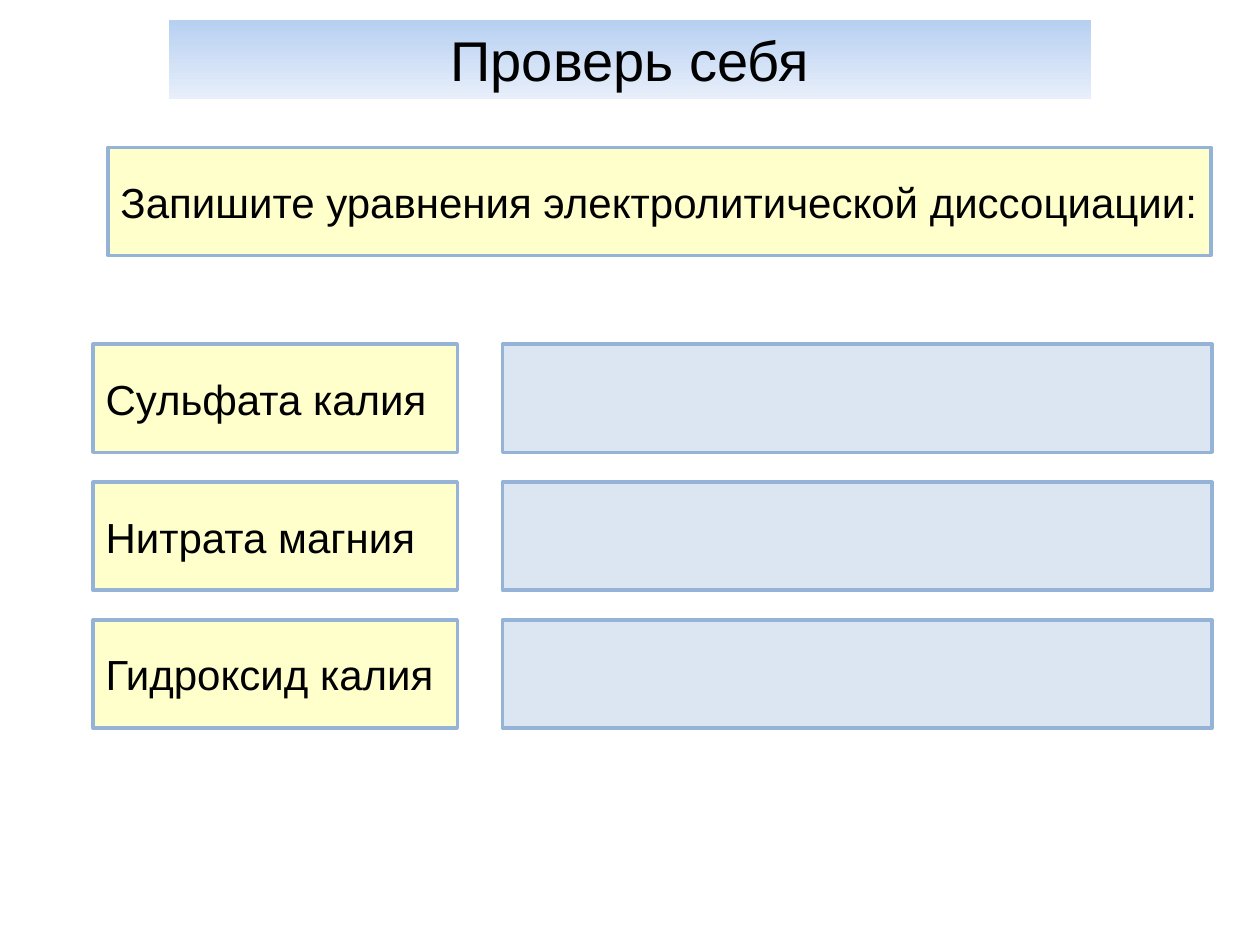
from pptx import Presentation
from pptx.dml.color import RGBColor
from pptx.enum.shapes import MSO_SHAPE
from pptx.enum.text import MSO_ANCHOR, PP_ALIGN
from pptx.util import Cm, Pt

COLORS = {
    "text": "000000",
    "border": "95B3D7",
    "card": "FFFFCC",
    "answer": "DCE6F2",
    "title_top": "B7D0F1",
    "title_bottom": "E8EFFA",
}
FONT = "Arial"
CARD_H = 2.18
SUBSTANCES = ["Сульфата калия", "Нитрата магния", "Гидроксид калия"]


def rgb(name):
    return RGBColor.from_string(COLORS[name])


def add_rect(slide, x, y, w, h):
    sp = slide.shapes.add_shape(MSO_SHAPE.RECTANGLE, Cm(x), Cm(y), Cm(w), Cm(h))
    sp.shadow.inherit = False
    return sp


def write(sp, text, size, align):
    tf = sp.text_frame
    tf.word_wrap = True
    tf.vertical_anchor = MSO_ANCHOR.MIDDLE
    tf.text = text
    p = tf.paragraphs[0]
    p.alignment = align
    font = p.runs[0].font
    font.name = FONT
    font.size = Pt(size)
    font.color.rgb = rgb("text")


def add_title(slide, x, y, w, h):
    sp = add_rect(slide, x, y, w, h)
    sp.line.fill.background()
    sp.fill.gradient()
    sp.fill.gradient_angle = 270
    for stop, name in zip(sp.fill.gradient_stops, ("title_top", "title_bottom")):
        stop.color.rgb = rgb(name)
    write(sp, "Проверь себя", 32, PP_ALIGN.CENTER)


def add_card(slide, x, y, w, fill, text=None):
    """Bordered box; without text it is an empty answer field."""
    sp = add_rect(slide, x, y, w, CARD_H)
    sp.fill.solid()
    sp.fill.fore_color.rgb = rgb(fill)
    sp.line.color.rgb = rgb("border")
    sp.line.width = Pt(2)
    if text:
        sp.text_frame.margin_right = 0
        write(sp, text, 24, PP_ALIGN.LEFT)


def add_exercise(slide, x, y, w):
    """Rows of a substance on the left and its answer field on the right."""
    name_w, answer_w, pitch = 7.34, 14.3, 2.78
    for i, substance in enumerate(SUBSTANCES):
        top = y + i * pitch
        add_card(slide, x, top, name_w, "card", substance)
        add_card(slide, x + w - answer_w, top, answer_w, "answer")


def main():
    prs = Presentation()
    prs.slide_width, prs.slide_height = Cm(25.4), Cm(19.05)
    slide = prs.slides.add_slide(prs.slide_layouts[6])
    add_title(slide, 3.4, 0.4, 18.6, 1.6)
    add_card(slide, 2.18, 2.97, 22.23, "card",
             "Запишите уравнения электролитической диссоциации:")
    add_exercise(slide, 1.88, 6.94, 22.55)
    prs.save("out.pptx")


if __name__ == "__main__":
    main()
